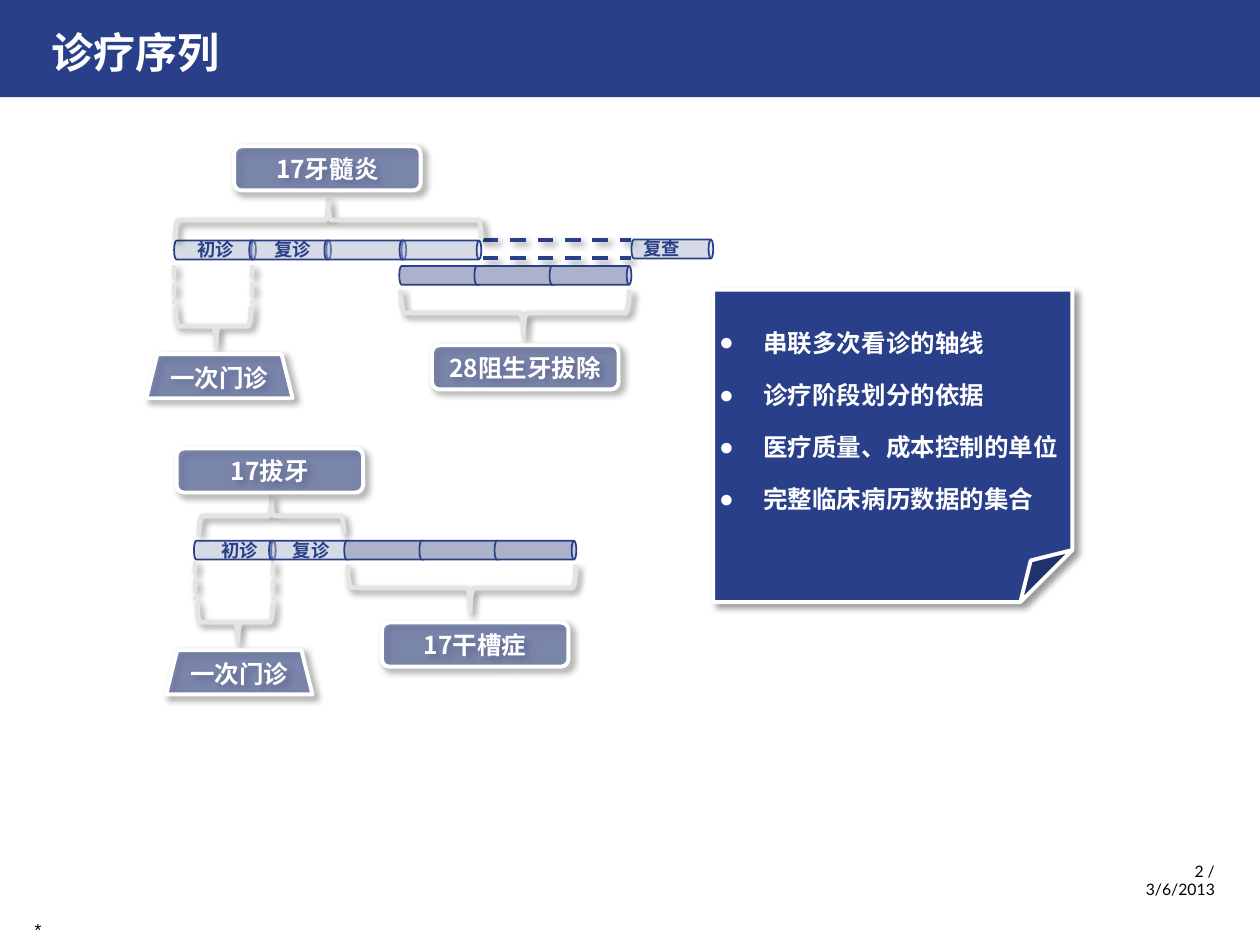
from typing import NamedTuple

import pptx
import pptx.dml.color
import pptx.enum.dml
import pptx.enum.shapes
import pptx.enum.text
import pptx.oxml
import pptx.oxml.ns
import pptx.util

Cm = pptx.util.Cm
Pt = pptx.util.Pt
RGBColor = pptx.dml.color.RGBColor
Shape = pptx.enum.shapes.MSO_SHAPE
Dash = pptx.enum.dml.MSO_LINE
Align = pptx.enum.text.PP_ALIGN
Anchor = pptx.enum.text.MSO_ANCHOR
qn = pptx.oxml.ns.qn

NAVY = RGBColor(0x2A, 0x3F, 0x8A)
STEEL = RGBColor(0xAB, 0xB2, 0xC9)
SILVER = RGBColor(0xE4, 0xE4, 0xE4)
WHITE = RGBColor(0xFF, 0xFF, 0xFF)
BLACK = RGBColor(0x00, 0x00, 0x00)

CJK = "Noto Sans CJK SC"
CAN_LENGTH, CAN_HEIGHT, CAN_PITCH = 1.65, 0.38, 1.515
VISIT_WIDTH = 1.57
LABEL_HEIGHT = 0.89
LABEL_WIDTHS = {Shape.ROUNDED_RECTANGLE: 3.76, Shape.TRAPEZOID: 2.95}


class Label(NamedTuple):
    text: str
    left: float
    top: float
    kind: Shape = Shape.ROUNDED_RECTANGLE


class Brace(NamedTuple):
    left: float
    top: float
    width: float
    height: float
    rotation: int
    middle: float


class CanRow(NamedTuple):
    left: float
    top: float
    light: int
    solid: int


class Caption(NamedTuple):
    text: str
    left: float
    top: float


LABELS = [
    Label("一次门诊", 2.95, 7.14, Shape.TRAPEZOID),
    Label("28阻生牙拔除", 8.71, 6.96),
    Label("17牙髓炎", 4.72, 2.95),
    Label("一次门诊", 3.35, 13.11, Shape.TRAPEZOID),
    Label("17干槽症", 7.7, 12.55),
    Label("17拔牙", 3.56, 9.04),
]
CAN_ROWS = [
    CanRow(3.51, 4.85, 4, 0),
    CanRow(8.05, 5.36, 0, 3),
    CanRow(12.73, 4.83, 1, 0),
    CanRow(3.91, 10.9, 2, 3),
]
BRACES = [
    Brace(3.53, 4.04, 6.17, 0.79, 90, 0.5),
    Brace(8.08, 5.84, 4.6, 0.94, 270, 0.537),
    Brace(3.54, 6.18, 1.52, 0.79, 270, 0.537),
    Brace(3.98, 12.15, 1.52, 0.79, 270, 0.537),
    Brace(4.01, 10.03, 2.92, 0.74, 90, 0.5),
    Brace(7.01, 11.38, 4.6, 0.94, 270, 0.537),
]
CAPTIONS = [
    Caption("复查", 12.7, 4.65),
    Caption("初诊", 3.71, 4.67),
    Caption("复诊", 5.26, 4.67),
    Caption("初诊", 4.19, 10.74),
    Caption("复诊", 5.64, 10.74),
]
VISIT_STARTS = [(3.51, 5.35), (3.93, 11.31)]
POINTS = ["串联多次看诊的轴线", "诊疗阶段划分的依据", "医疗质量、成本控制的单位", "完整临床病历数据的集合"]


def set_effects(shape, shadow: bool) -> None:
    """Give a finished shape or connector the soft shadow, or none."""
    properties = shape.element.spPr
    for old in properties.findall(qn("a:effectLst")):
        properties.remove(old)
    inner = (
        '<a:outerShdw blurRad="50800" dist="38100" dir="2700000" algn="tl" rotWithShape="0">'
        '<a:srgbClr val="000000"><a:alpha val="40000"/></a:srgbClr></a:outerShdw>'
        if shadow else ""
    )
    properties.append(pptx.oxml.parse_xml(
        f"<a:effectLst {pptx.oxml.ns.nsdecls('a')}>{inner}</a:effectLst>"))


def add_figure(page, kind, left: float, top: float, width: float, height: float, *,
               fill=None, opacity=100, line=None, weight=1.0, shadow=False,
               rotation=0, adjustments=()):
    """Draw a preset shape; the box given is the one seen after a quarter turn."""
    if rotation:
        shift = (width - height) / 2
        left, top, width, height = left + shift, top - shift, height, width
    figure = page.shapes.add_shape(kind, Cm(left), Cm(top), Cm(width), Cm(height))
    figure.rotation = rotation
    for index, value in enumerate(adjustments):
        figure.adjustments[index] = value
    if fill is None:
        figure.fill.background()
    else:
        figure.fill.solid()
        figure.fill.fore_color.rgb = fill
        if opacity < 100:
            colour = figure.element.spPr.find(qn("a:solidFill"))[0]
            colour.makeelement(qn("a:alpha"))
            alpha = pptx.oxml.parse_xml(
                f'<a:alpha {pptx.oxml.ns.nsdecls("a")} val="{opacity * 1000}"/>')
            colour.append(alpha)
    if line is None:
        figure.line.fill.background()
    else:
        figure.line.color.rgb = line
        figure.line.width = Pt(weight)
    set_effects(figure, shadow)
    return figure


def write(frame, lines: list[str], *, size, colour, font=CJK, bold=False,
          align=Align.LEFT, anchor=Anchor.TOP, wrap=False, spacing=None,
          gap=0.0, bullet=None, indent=0.0) -> None:
    frame.word_wrap = wrap
    frame.vertical_anchor = anchor
    for index, text in enumerate(lines):
        para = frame.paragraphs[0] if index == 0 else frame.add_paragraph()
        para.alignment = align
        if spacing:
            para.line_spacing = spacing
        if gap and index:
            para.space_before = Pt(gap)
        if bullet:
            properties = para._p.get_or_add_pPr()
            properties.set("marL", str(Cm(indent)))
            properties.set("indent", str(-Cm(indent)))
            for tag, name, value in (("a:buFont", "typeface", "Arial"),
                                     ("a:buChar", "char", bullet)):
                properties.append(pptx.oxml.parse_xml(
                    f'<{tag} {pptx.oxml.ns.nsdecls("a")} {name}="{value}"/>'))
        span = para.add_run()
        span.text = text
        span.font.name = font
        span.font.size = Pt(size)
        span.font.bold = bold
        span.font.color.rgb = colour
        span.font._element.append(pptx.oxml.parse_xml(
            f'<a:ea {pptx.oxml.ns.nsdecls("a")} typeface="{font}"/>'))


def add_text(page, lines: list[str], left: float, top: float, width: float,
             height: float, **style) -> None:
    box = page.shapes.add_textbox(Cm(left), Cm(top), Cm(width), Cm(height))
    write(box.text_frame, lines, **style)


def add_dashes(page, start: tuple, end: tuple, colour, weight: float, dash) -> None:
    dashes = page.shapes.add_connector(
        pptx.enum.shapes.MSO_CONNECTOR.STRAIGHT, *map(Cm, start + end))
    dashes.line.color.rgb = colour
    dashes.line.width = Pt(weight)
    dashes.line.dash_style = dash
    set_effects(dashes, shadow=True)


def add_can_row(page, row: CanRow) -> None:
    for index in range(row.light + row.solid):
        can = add_figure(page, Shape.CAN, row.left + index * CAN_PITCH, row.top,
                         CAN_LENGTH, CAN_HEIGHT, fill=STEEL, line=NAVY, rotation=90,
                         opacity=48 if index < row.light else 100, adjustments=(0.25,))
        can.element.spPr.get_or_add_xfrm().set("flipH", "1")


def main() -> None:
    deck = pptx.Presentation()
    deck.slide_width, deck.slide_height = Cm(25.4), Cm(19.05)
    page = deck.slides.add_slide(deck.slide_layouts[6])

    add_figure(page, Shape.RECTANGLE, 0, 0, 25.4, 1.96, fill=NAVY)
    add_text(page, ["2 /", "3/6/2013"], 17.91, 17.3, 6.83, 0.94, size=9, colour=BLACK,
             font="Lato", align=Align.RIGHT, wrap=True, spacing=0.9)
    add_text(page, ["*"], 0.23, 18.39, 1.07, 0.71, size=10, colour=BLACK, font="Arial",
             align=Align.CENTER, anchor=Anchor.MIDDLE, wrap=True)
    add_text(page, ["诊疗序列"], 0.79, 0.41, 3.94, 1.27, size=24, colour=WHITE, bold=True)

    for height in (4.83, 5.21):
        add_dashes(page, (9.73, height), (12.73, height), NAVY, 2.25, Dash.DASH)
    for row in CAN_ROWS:
        add_can_row(page, row)
    for left, top in VISIT_STARTS:
        for side in (left, left + VISIT_WIDTH):
            add_dashes(page, (side, top), (side, top + 0.78), SILVER, 2.5, Dash.SQUARE_DOT)
    for brace in BRACES:
        add_figure(page, Shape.LEFT_BRACE, *brace[:4], line=SILVER, weight=2.75, shadow=True,
                   rotation=brace.rotation, adjustments=(0.083, brace.middle))
    for label in LABELS:
        figure = add_figure(page, label.kind, label.left, label.top, LABEL_WIDTHS[label.kind],
                            LABEL_HEIGHT, fill=NAVY, opacity=50, line=WHITE, weight=2.25,
                            shadow=True)
        write(figure.text_frame, [label.text], size=14, colour=WHITE, bold=True,
              align=Align.CENTER, anchor=Anchor.MIDDLE)
    for caption in CAPTIONS:
        add_text(page, [caption.text], caption.left, caption.top, 1.27, 0.71, size=10.5,
                 colour=NAVY, bold=True, align=Align.CENTER)

    add_figure(page, Shape.FOLDED_CORNER, 14.38, 5.84, 7.24, 6.3, fill=NAVY, line=WHITE,
               weight=2.25, shadow=True)
    add_text(page, POINTS, 14.25, 6.48, 7.44, 4.45, size=14, colour=WHITE, bold=True,
             wrap=True, gap=13, bullet="●", indent=0.89)
    deck.save("out.pptx")


if __name__ == "__main__":
    main()
